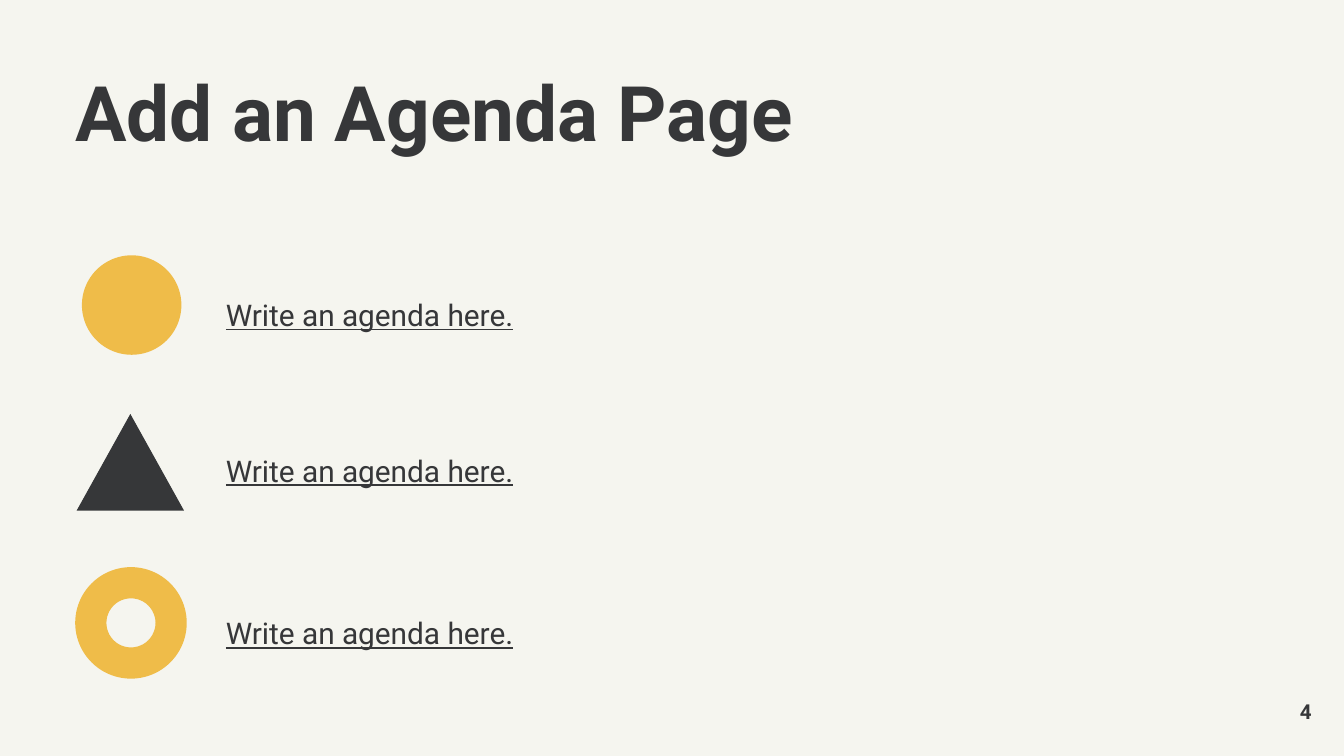
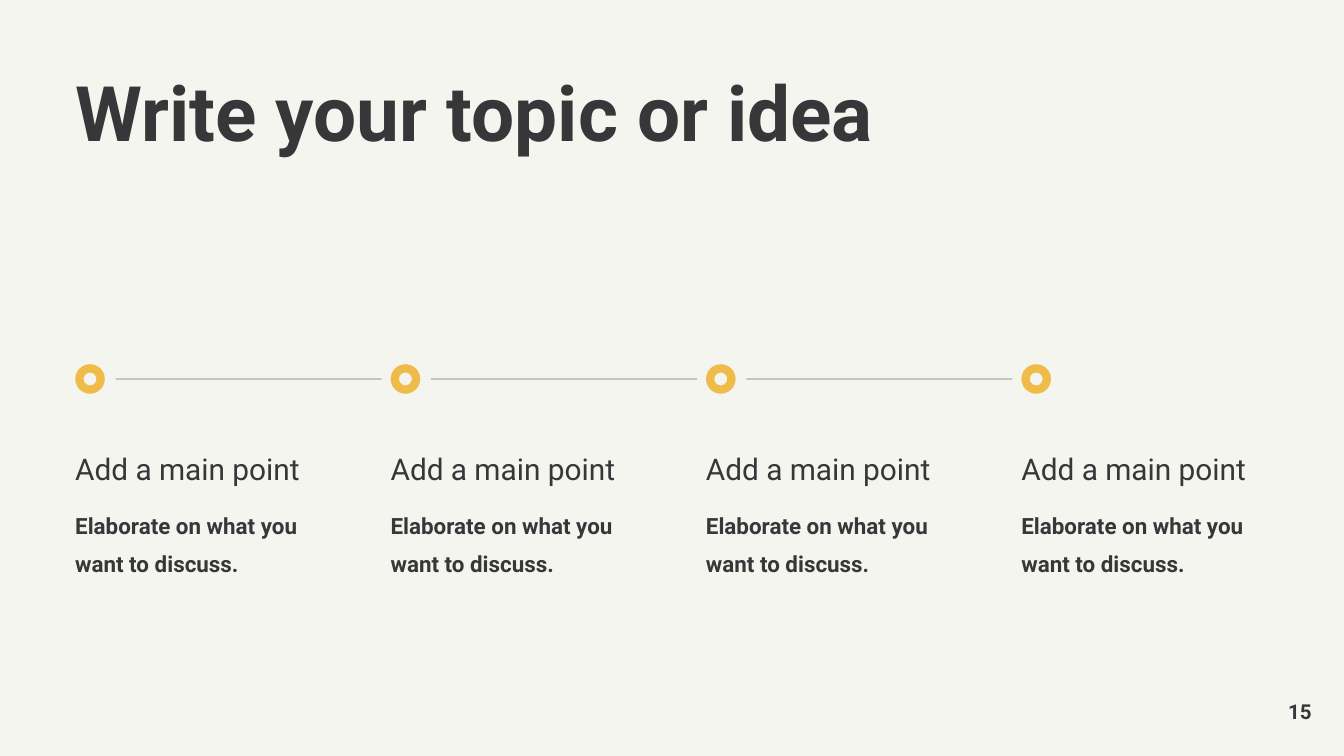
"""Build an agenda slide and a four-step timeline slide."""
from lxml import etree
from pptx import Presentation
from pptx import util as u
from pptx.dml.color import RGBColor
from pptx.enum import shapes, text
from pptx.oxml.ns import qn

COLORS = {"paper": "F5F5EF", "ink": "363739", "accent": "EFBC49"}
FONT = "Roboto"
WIDTH = 10
LEFT = 0.56


class Deck:
    """Holds the shared style and the current slide."""

    def __init__(self):
        self.presentation = Presentation()
        self.presentation.slide_width = u.Inches(WIDTH)
        self.presentation.slide_height = u.Inches(WIDTH * 9 / 16)
        self.slide = None

    def color(self, name):
        return RGBColor.from_string(COLORS[name])

    def add_slide(self, title, number):
        self.slide = self.presentation.slides.add_slide(self.presentation.slide_layouts[6])
        background = self.slide.background.fill
        background.solid()
        background.fore_color.rgb = self.color("paper")
        self.add_text(title, (LEFT, 0.56, 7.09, 0.79), 41, bold=True, spacing=0.9)
        page = self.add_text(str(number), (9.16, 5.19, 0.6, 0.2), 11, bold=True, spacing=1.0)
        page.vertical_anchor = text.MSO_ANCHOR.MIDDLE
        page.paragraphs[0].alignment = text.PP_ALIGN.RIGHT

    def add_text(self, words, box, size, bold=False, underline=False, spacing=1.4):
        frame = self.slide.shapes.add_textbox(*map(u.Inches, box)).text_frame
        frame.word_wrap = True
        frame.margin_left = frame.margin_right = frame.margin_top = frame.margin_bottom = 0
        frame.text = words
        paragraph = frame.paragraphs[0]
        paragraph.line_spacing = spacing
        font = paragraph.runs[0].font
        font.name, font.size = FONT, u.Pt(size)
        font.bold, font.underline = bold, underline
        font.color.rgb = self.color("ink")
        return frame

    def add_marker(self, kind, box, color):
        shape = self.slide.shapes.add_shape(kind, *map(u.Inches, box))
        shape.shadow.inherit = False
        shape.fill.solid()
        shape.fill.fore_color.rgb = self.color(color)
        shape.line.fill.background()
        return shape

    def add_ring(self, left, top, size):
        ring = self.add_marker(shapes.MSO_SHAPE.DONUT, (left, top, size, size), "accent")
        ring.adjustments[0] = 0.28

    def add_line(self, start, end, y, opacity):
        connector = self.slide.shapes.add_connector(
            shapes.MSO_CONNECTOR.STRAIGHT, *map(u.Inches, (start, y, end, y)))
        connector.line.width = u.Pt(0.75)
        connector.line.color.rgb = self.color("ink")
        properties = connector.element.spPr
        fill_color = next(properties.iter(qn("a:srgbClr")))
        etree.SubElement(fill_color, qn("a:alpha"), val=str(opacity * 1000))
        etree.SubElement(properties, qn("a:effectLst"))


def build_agenda(deck):
    deck.add_slide("Add an Agenda Page", 4)
    deck.add_marker(shapes.MSO_SHAPE.ISOSCELES_TRIANGLE, (0.57, 3.08, 0.8, 0.72), "ink")
    deck.add_marker(shapes.MSO_SHAPE.OVAL, (0.61, 1.9, 0.74, 0.74), "accent")
    for top in (2.1, 3.26, 4.47):
        deck.add_text("Write an agenda here.", (1.68, top, 4.29, 0.27), 16, underline=True)
    deck.add_ring(LEFT, 4.22, 0.83)


def build_timeline(deck):
    deck.add_slide("Write your topic or idea", 15)
    steps = 4
    pitch = (7.6 - LEFT) / (steps - 1)
    for step in range(steps):
        left = LEFT + step * pitch
        if step < steps - 1:
            deck.add_line(left + 0.3, left + 2.28, 2.82, opacity=39)
        deck.add_text("Add a main point", (left, 3.25, 1.84, 0.27), 16)
        deck.add_text("Elaborate on what you want to discuss.",
                      (left, 3.73, 1.84, 0.48), 12, bold=True)
        deck.add_ring(left, 2.71, 0.22)


def main():
    deck = Deck()
    build_agenda(deck)
    build_timeline(deck)
    deck.presentation.save("out.pptx")


if __name__ == "__main__":
    main()
